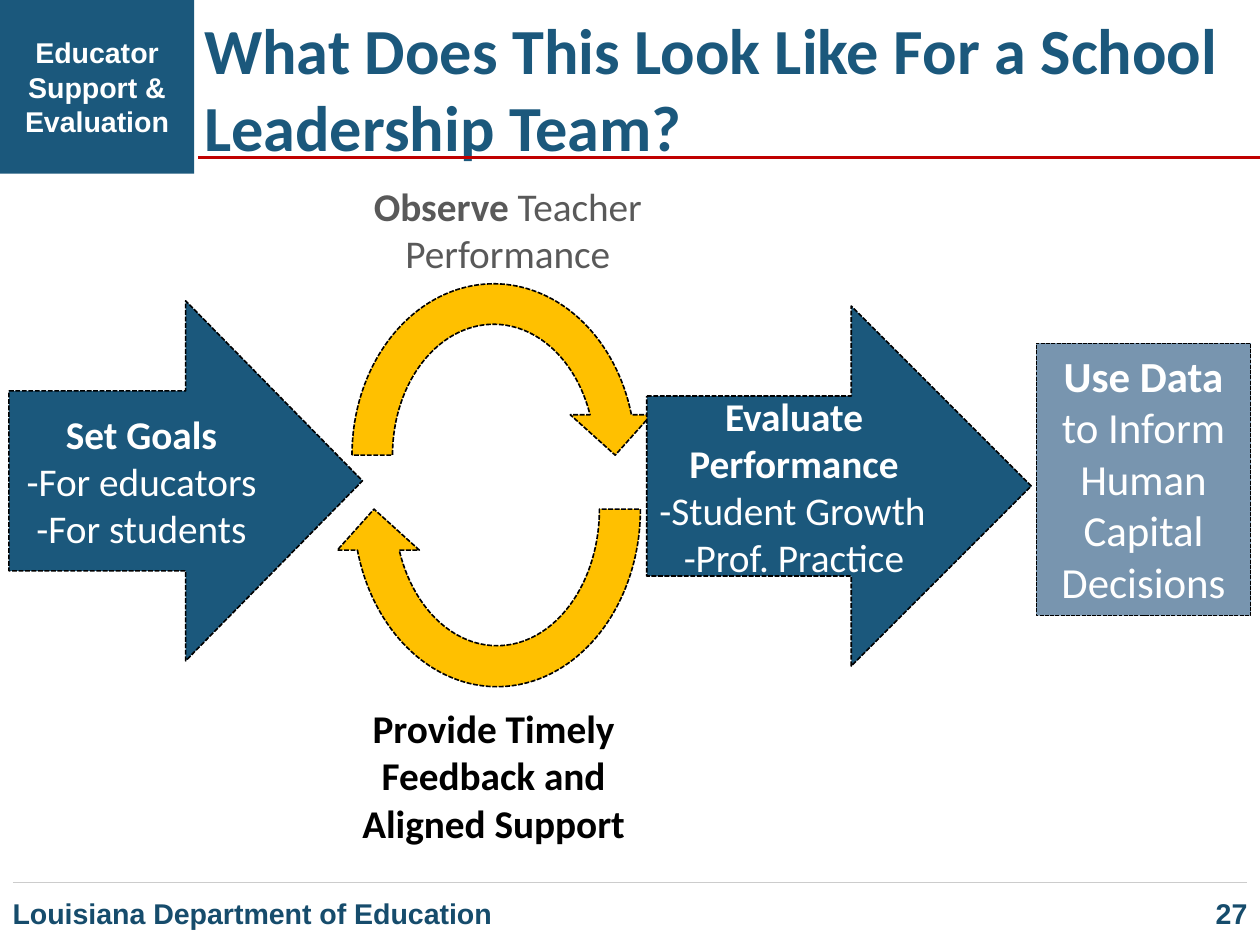
from dataclasses import dataclass
from typing import Optional

import pptx
import pptx.dml.color
import pptx.enum.dml
import pptx.enum.shapes
import pptx.enum.text
import pptx.oxml.ns
import pptx.util
from lxml import etree

Pt = pptx.util.Pt
Preset = pptx.enum.shapes.MSO_SHAPE
Align = pptx.enum.text.PP_ALIGN
Anchor = pptx.enum.text.MSO_ANCHOR


@dataclass(frozen=True)
class Theme:
    navy: str = "1B587C"
    footer_navy: str = "164C6C"
    slate: str = "7895AF"
    gold: str = "FFC000"
    red: str = "C00000"
    rule_gray: str = "CCCCCC"
    text_gray: str = "595959"
    black: str = "000000"
    white: str = "FFFFFF"
    body_font: str = "Calibri"
    label_font: str = "Arial"
    title_size: float = 36
    data_size: float = 24
    step_size: float = 22
    label_size: float = 16


THEME = Theme()


@dataclass(frozen=True)
class Span:
    text: str
    bold: bool = True


@dataclass(frozen=True)
class Para:
    spans: tuple[Span, ...]
    align: Align = Align.CENTER


@dataclass(frozen=True)
class Copy:
    paras: tuple[Para, ...]
    size: float = THEME.step_size
    color: str = THEME.white
    font: str = THEME.body_font
    anchor: Anchor = Anchor.MIDDLE


@dataclass(frozen=True)
class Box:
    """A block on the page; without a preset it is a plain text box."""
    left: float
    top: float
    width: float
    height: float
    copy: Optional[Copy] = None
    preset: Optional[Preset] = None
    fill: str = THEME.navy
    outline: float = 0
    rotation: float = 0


@dataclass(frozen=True)
class Rule:
    left: float
    right: float
    y: float
    color: str
    weight: float


def single(text: str, align: Align = Align.CENTER) -> tuple[Para, ...]:
    return (Para((Span(text),), align),)


BOXES = (
    Box(107.3, 2.2, 598.3, 67.7,
        Copy(single("What Does This Look Like For a School Leadership Team?", Align.LEFT),
             THEME.title_size, THEME.navy, anchor=Anchor.TOP)),
    Box(0, 0, 108.7, 97.2,
        Copy(single("Educator Support & Evaluation"), THEME.label_size, font=THEME.label_font),
        Preset.RECTANGLE),
    Box(5, 168.5, 198, 201.6,
        Copy((Para((Span("Set Goals"),)),
              Para((Span("-For educators", False),)),
              Para((Span("-For students", False),)))),
        Preset.RIGHT_ARROW, outline=0.9),
    Box(200.2, 98.6, 168.5, 60.5,
        Copy((Para((Span("Observe"), Span(" Teacher Performance", False))),),
             color=THEME.text_gray, anchor=Anchor.TOP)),
    Box(185.8, 147.6, 181.4, 214.6, None, Preset.CIRCULAR_ARROW, THEME.gold, 0.9),
    Box(186.5, 174.2, 183.6, 221.8, None, Preset.CIRCULAR_ARROW, THEME.gold, 0.9, 180),
    Box(174.2, 391, 204.5, 87.1,
        Copy(single("Provide Timely Feedback and Aligned Support"),
             color=THEME.black, anchor=Anchor.TOP)),
    Box(362.2, 171.4, 215.3, 201.6,
        Copy((Para((Span("Evaluate Performance"),)),
              Para((Span("-Student Growth", False),), Align.LEFT),
              Para((Span("-Prof. Practice", False),)))),
        Preset.RIGHT_ARROW, outline=0.9),
    Box(580.3, 192.2, 120.2, 152.6,
        Copy((Para((Span("Use Data "), Span("to Inform Human Capital Decisions", False))),),
             THEME.data_size, anchor=Anchor.TOP),
        Preset.RECTANGLE, THEME.slate, 0.75),
    Box(508.3, 493.9, 197.3, 35.3,
        Copy(single("27", Align.RIGHT), THEME.label_size, THEME.footer_navy, THEME.label_font)),
    Box(0, 493.9, 342.7, 35.3,
        Copy(single("Louisiana Department of Education", Align.LEFT),
             THEME.label_size, THEME.footer_navy, THEME.label_font)),
)

RULES = (
    Rule(110.9, 705.6, 88.2, THEME.red, 1.5),
    Rule(7.2, 698.4, 494.1, THEME.rule_gray, 0.75),
)


def rgb(value: str) -> pptx.dml.color.RGBColor:
    return pptx.dml.color.RGBColor.from_string(value)


def write_copy(frame, copy: Copy) -> None:
    frame.word_wrap = True
    frame.vertical_anchor = copy.anchor
    for index, para in enumerate(copy.paras):
        paragraph = frame.add_paragraph() if index else frame.paragraphs[0]
        paragraph.alignment = para.align
        for span in para.spans:
            run = paragraph.add_run()
            run.text = span.text
            run.font.name = copy.font
            run.font.size = Pt(copy.size)
            run.font.bold = span.bold
            run.font.color.rgb = rgb(copy.color)


def draw_box(page, box: Box) -> None:
    bounds = [Pt(value) for value in (box.left, box.top, box.width, box.height)]
    if box.preset is None:
        shape = page.shapes.add_textbox(*bounds)
    else:
        shape = page.shapes.add_shape(box.preset, *bounds)
        shape.shadow.inherit = False
        shape.rotation = box.rotation
        shape.fill.solid()
        shape.fill.fore_color.rgb = rgb(box.fill)
        if box.outline:
            shape.line.color.rgb = rgb(THEME.black)
            shape.line.width = Pt(box.outline)
            shape.line.dash_style = pptx.enum.dml.MSO_LINE.SQUARE_DOT
        else:
            shape.line.fill.background()
    if box.copy:
        write_copy(shape.text_frame, box.copy)


def draw_rule(page, rule: Rule) -> None:
    line = page.shapes.add_connector(
        pptx.enum.shapes.MSO_CONNECTOR.STRAIGHT,
        Pt(rule.left), Pt(rule.y), Pt(rule.right), Pt(rule.y))
    line.line.color.rgb = rgb(rule.color)
    line.line.width = Pt(rule.weight)
    etree.SubElement(line._element.spPr, pptx.oxml.ns.qn("a:effectLst"))


def main() -> None:
    deck = pptx.Presentation()
    deck.slide_width, deck.slide_height = Pt(705.6), Pt(529.2)
    page = deck.slides.add_slide(deck.slide_layouts[6])
    for box in BOXES:
        draw_box(page, box)
    for rule in RULES:
        draw_rule(page, rule)
    deck.save("out.pptx")


if __name__ == "__main__":
    main()
